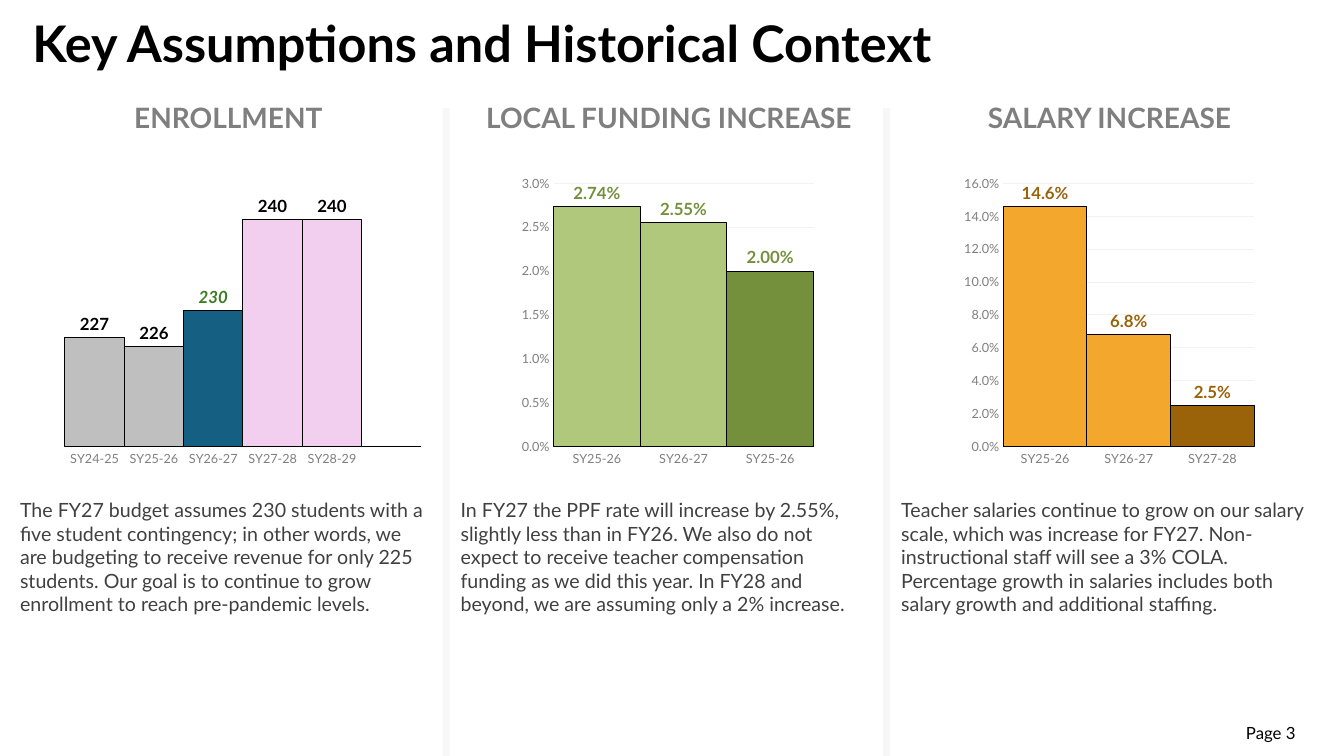
from dataclasses import dataclass

from lxml import etree
from pptx import Presentation
from pptx.chart.data import CategoryChartData
from pptx.dml.color import RGBColor
from pptx.enum.chart import XL_CHART_TYPE, XL_LABEL_POSITION, XL_TICK_MARK
from pptx.enum.shapes import MSO_SHAPE
from pptx.enum.text import MSO_ANCHOR, MSO_AUTO_SIZE, PP_ALIGN
from pptx.oxml.ns import qn
from pptx.util import Inches, Pt

COLUMNS = XL_CHART_TYPE.COLUMN_CLUSTERED
OUTSIDE_END = XL_LABEL_POSITION.OUTSIDE_END
NO_TICK = XL_TICK_MARK.NONE
RECTANGLE = MSO_SHAPE.RECTANGLE
TOP = MSO_ANCHOR.TOP
GROW = MSO_AUTO_SIZE.SHAPE_TO_FIT_TEXT
LEFT, CENTER = PP_ALIGN.LEFT, PP_ALIGN.CENTER

TITLE_ONLY = 5
COLUMN_PITCH = 4.37
BLACK, GRAY, DARK_GRAY = "000000", "7F7F7F", "404040"
SILVER, PINK = "BFBFBF", "F2CFEE"
LIGHT_GREEN, GREEN = "AFC87B", "75903C"
ORANGE, BROWN = "F3A72D", "9A6309"


def color(value):
    return RGBColor.from_string(value)


@dataclass
class BarChart:
    """Chart content; left and width are inches within the column, plot is x, y, w, h as shares."""
    left: float
    width: float
    plot: tuple
    categories: list
    values: list
    fills: list
    label_color: str
    label_format: str
    scale: tuple
    show_scale: bool = True
    highlight: int | None = None


@dataclass
class Topic:
    heading: str
    chart: BarChart
    body: str


TOPICS = [
    Topic(
        "ENROLLMENT",
        BarChart(0.57, 3.68, (0.02, 0.02, 0.96, 0.9),
                 ["SY24-25", "SY25-26", "SY26-27", "SY27-28", "SY28-29", ""],
                 [227, 226, 230, 240, 240, None],
                 [SILVER, SILVER, "156082", PINK, PINK],
                 BLACK, "#,##0", (215, 245, 5), show_scale=False, highlight=2),
        "The FY27 budget assumes 230 students with a five student contingency; in other "
        "words, we are budgeting to receive revenue for only 225 students. Our goal is to "
        "continue to grow enrollment to reach pre-pandemic levels."),
    Topic(
        "LOCAL FUNDING INCREASE",
        BarChart(0.76, 3, (0.12, 0.05, 0.86, 0.87),
                 ["SY25-26", "SY26-27", "SY25-26"], [0.0274, 0.0255, 0.02],
                 [LIGHT_GREEN, LIGHT_GREEN, GREEN],
                 GREEN, "0.00%", (0, 0.03, 0.005)),
        "In FY27 the PPF rate will increase by 2.55%, slightly less than in FY26. We also do "
        "not expect to receive teacher compensation funding as we did this year. In FY28 and "
        "beyond, we are assuming only a 2% increase."),
    Topic(
        "SALARY INCREASE",
        BarChart(0.76, 3, (0.15, 0.05, 0.83, 0.87),
                 ["SY25-26", "SY26-27", "SY27-28"], [0.146, 0.068, 0.025],
                 [ORANGE, ORANGE, BROWN],
                 BROWN, "0.0%", (0, 0.16, 0.02)),
        "Teacher salaries continue to grow on our salary scale, which was increase for FY27. "
        "Non-instructional staff will see a 3% COLA. Percentage growth in salaries includes "
        "both salary growth and additional staffing."),
]


class SlideBuilder:
    font_name = "Lato"

    def __init__(self, page):
        self.page = page

    def style(self, font, size, font_color, bold=False, italic=False):
        font.name = self.font_name
        font.size = Pt(size)
        font.bold = bold
        font.italic = italic
        font.color.rgb = color(font_color)

    def fill_text(self, box, text, size, font_color, bold=False, align=LEFT):
        frame = box.text_frame
        frame.word_wrap = True
        frame.auto_size = GROW
        frame.vertical_anchor = TOP
        para = frame.paragraphs[0]
        para.alignment = align
        span = para.add_run()
        span.text = text
        self.style(span.font, size, font_color, bold)

    def title(self, text):
        box = self.page.shapes.title
        box.left, box.top = Inches(0.22), Inches(0.07)
        box.width, box.height = Inches(13.33), Inches(0.71)
        self.fill_text(box, text, 36, BLACK, bold=True)

    def text(self, text, left, top, width, height, *style, **options):
        box = self.page.shapes.add_textbox(
            Inches(left), Inches(top), Inches(width), Inches(height))
        self.fill_text(box, text, *style, **options)

    def divider(self, left):
        bar = self.page.shapes.add_shape(
            RECTANGLE, Inches(left), Inches(1.07), Inches(0.07), Inches(6.58))
        bar.shadow.inherit = False
        bar.fill.solid()
        bar.fill.fore_color.rgb = color("D9D9D9")
        tint = bar.element.spPr.find(qn("a:solidFill"))[0]
        etree.SubElement(tint, qn("a:alpha"), val="20000")
        bar.line.fill.background()

    def chart(self, content, column_left):
        data = CategoryChartData(number_format=content.label_format)
        data.categories = content.categories
        data.add_series("Series 1", content.values)
        chart = self.page.shapes.add_chart(
            COLUMNS, Inches(column_left + content.left), Inches(1.67),
            Inches(content.width), Inches(3), data).chart
        chart.has_legend = False
        chart.has_title = False
        chart.font.name = "Karla"
        chart.font.size = Pt(10)
        chart.font.color.rgb = color(BLACK)
        self.place_plot(chart, content.plot)
        self.format_axes(chart, content)
        self.format_bars(chart.plots[0], content)

    def place_plot(self, chart, shares):
        """Fix the inner plot area at the given shares of the chart frame."""
        area = chart.element.find(".//" + qn("c:plotArea"))
        for old in area.findall(qn("c:layout")):
            area.remove(old)
        layout = etree.Element(qn("c:layout"))
        manual = etree.SubElement(layout, qn("c:manualLayout"))
        settings = [("layoutTarget", "inner"), ("xMode", "edge"), ("yMode", "edge")]
        settings += zip("xywh", map(str, shares))
        for name, value in settings:
            etree.SubElement(manual, qn("c:" + name), val=value)
        area.insert(0, layout)

    def format_axes(self, chart, content):
        for axis in (chart.category_axis, chart.value_axis):
            axis.major_tick_mark = axis.minor_tick_mark = NO_TICK
            self.style(axis.tick_labels.font, 9, GRAY)
        chart.category_axis.format.line.color.rgb = color(BLACK)
        chart.category_axis.format.line.width = Pt(0.75 if content.show_scale else 0.25)

        scale = chart.value_axis
        scale.minimum_scale, scale.maximum_scale, scale.major_unit = content.scale
        scale.visible = scale.has_major_gridlines = content.show_scale
        if content.show_scale:
            scale.tick_labels.number_format = "0.0%"
            scale.tick_labels.number_format_is_linked = False
            scale.format.line.fill.background()
            scale.major_gridlines.format.line.color.rgb = color("F2F2F2")
            scale.major_gridlines.format.line.width = Pt(0.75)

    def format_bars(self, plot, content):
        plot.gap_width = 0
        plot.overlap = -27
        plot.vary_by_categories = False
        series = plot.series[0]
        series.invert_if_negative = False
        for index, fill in enumerate(content.fills):
            bar = series.points[index].format
            bar.fill.solid()
            bar.fill.fore_color.rgb = color(fill)
            bar.line.color.rgb = color(BLACK)
            bar.line.width = Pt(0.75)
        labels = series.data_labels
        labels.show_value = True
        labels.position = OUTSIDE_END
        labels.number_format = content.label_format
        labels.number_format_is_linked = False
        self.style(labels.font, 12, content.label_color, bold=True)
        if content.highlight is not None:
            label = series.points[content.highlight].data_label
            self.style(label.font, 12, "3B7D23", bold=True, italic=True)
            label.position = OUTSIDE_END


def main():
    deck = Presentation()
    deck.slide_width, deck.slide_height = Inches(13.33), Inches(7.5)
    builder = SlideBuilder(deck.slides.add_slide(deck.slide_layouts[TITLE_ONLY]))
    builder.title("Key Assumptions and Historical Context")
    for index, topic in enumerate(TOPICS):
        left = index * COLUMN_PITCH
        if index:
            builder.divider(left + 0.02)
        builder.text(topic.heading, left + 0.22, 0.95, 4.09, 0.44, 20, GRAY,
                     bold=True, align=CENTER)
        builder.chart(topic.chart, left)
        builder.text(topic.body, left + 0.1, 4.89, 4.21, 1.28, 14, DARK_GRAY)
    builder.text("Page 3", 12.26, 7.12, 0.87, 0.3, 12, BLACK)
    deck.save("out.pptx")


if __name__ == "__main__":
    main()
